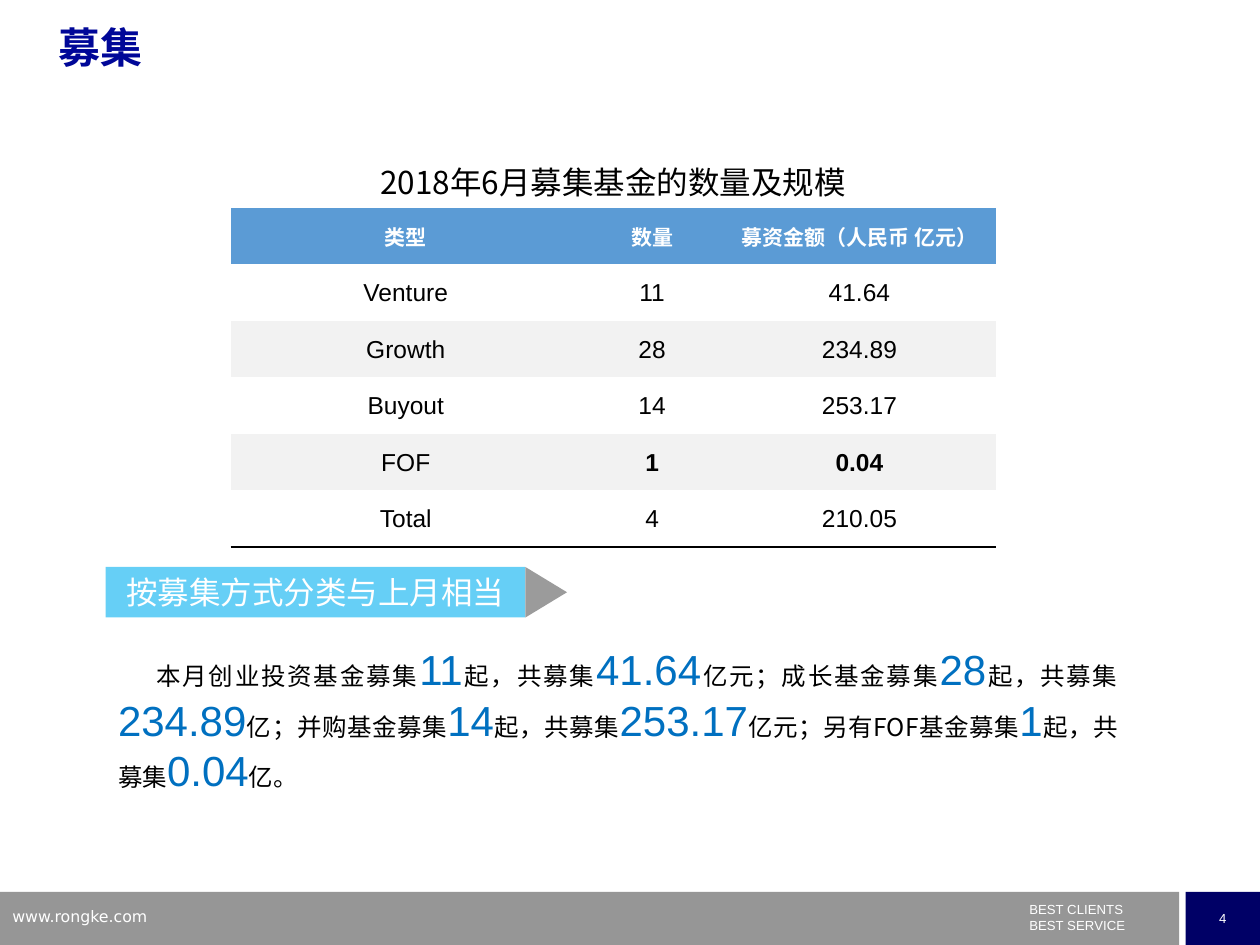
from dataclasses import dataclass

from lxml import etree
from pptx import Presentation
from pptx import util as u
from pptx.dml import color as dml
from pptx.enum import shapes, text
from pptx.oxml import ns

HUES = {
    "white": "FFFFFF",
    "black": "000000",
    "grey": "969696",
    "navy": "000066",
    "title": "000798",
    "spot": "0070C0",
    "head": "5B9BD5",
    "band": "F2F2F2",
    "sky": "00B0F0",
    "tip": "595959",
}
HAN = "Noto Sans CJK SC"
LEFT, MID, JUST = text.PP_ALIGN.LEFT, text.PP_ALIGN.CENTER, text.PP_ALIGN.JUSTIFY
PLAIN = "{2D5ABB26-0587-4C30-8999-92F81FD0307C}"

HEADS = ["类型", "数量", "募资金额（人民币 亿元）"]
FUNDS = [
    ["Venture", "11", "41.64"],
    ["Growth", "28", "234.89"],
    ["Buyout", "14", "253.17"],
    ["FOF", "1", "0.04"],
    ["Total", "4", "210.05"],
]
BODY = (
    "本月创业投资基金募集|11|起，共募集|41.64|亿元；成长基金募集|28|起，共募集|234.89|"
    "亿；并购基金募集|14|起，共募集|253.17|亿元；另有FOF基金募集|1|起，共募集|0.04|亿。"
)


@dataclass
class Area:
    left: float
    top: float
    width: float
    height: float

    def cm(self) -> list:
        return [u.Cm(v) for v in (self.left, self.top, self.width, self.height)]


def hue(name: str) -> dml.RGBColor:
    return dml.RGBColor.from_string(HUES[name])


def node(parent, tag: str, **attrs):
    return etree.SubElement(parent, ns.qn(tag), **attrs)


def write(frame, words: str, *, size: float, face: str = "Arial", tone: str = "black",
          bold: bool = False, align=LEFT, lead: float = 1, indent: float = 0) -> None:
    for row, line in enumerate(words.split("\n")):
        para = frame.add_paragraph() if row else frame.paragraphs[0]
        para.alignment = align
        para.line_spacing = lead
        if indent:
            para._p.get_or_add_pPr().set("indent", str(u.Cm(indent)))
        for turn, part in enumerate(line.split("|")):
            spot = turn % 2 == 1
            run = para.add_run()
            run.text = part
            font = run.font
            font.size = u.Pt(24 if spot else size)
            font.bold = bold
            font.color.rgb = hue("spot" if spot else tone)
            font.name = "Arial" if spot else face
            node(run._r.get_or_add_rPr(), "a:ea", typeface=HAN if face == "Arial" else face)


def label(slide, area: Area, words: str, *, grow: bool = False, inset: float = 0.13, **look) -> None:
    frame = slide.shapes.add_textbox(*area.cm()).text_frame
    frame.word_wrap = True
    frame.margin_top = u.Cm(inset)
    if grow:
        frame.auto_size = text.MSO_AUTO_SIZE.SHAPE_TO_FIT_TEXT
    write(frame, words, **look)


def block(place, area: Area, tone: str, kind=shapes.MSO_SHAPE.RECTANGLE, alpha: int = 100):
    shape = place.add_shape(kind, *area.cm())
    shape.shadow.inherit = False
    shape.fill.solid()
    shape.fill.fore_color.rgb = hue(tone)
    shape.line.fill.background()
    if alpha < 100:
        paint = shape._element.spPr.find(ns.qn("a:solidFill"))
        node(paint[0], "a:alpha", val=str(alpha * 1000))
    shape.text_frame.vertical_anchor = text.MSO_ANCHOR.MIDDLE
    return shape


def rule(cell) -> None:
    props = cell._tc.get_or_add_tcPr()
    line = etree.Element(ns.qn("a:lnB"), w=str(u.Pt(1)))
    node(node(line, "a:solidFill"), "a:srgbClr", val=HUES["black"])
    props.insert(0, line)


def fill_cell(cell, words: str, shade: str = "", **look) -> None:
    cell.margin_left = cell.margin_right = cell.margin_top = u.Cm(0.03)
    cell.margin_bottom = 0
    cell.vertical_anchor = text.MSO_ANCHOR.MIDDLE
    if shade:
        cell.fill.solid()
        cell.fill.fore_color.rgb = hue(shade)
    else:
        cell.fill.background()
    write(cell.text_frame, words, align=MID, **look)


def draw_table(slide) -> None:
    area = Area(4.65, 3.05, 15.42, 7.98)
    table = slide.shapes.add_table(len(FUNDS) + 2, len(HEADS), *area.cm()).table
    table._tbl.tblPr.find(ns.qn("a:tableStyleId")).text = PLAIN
    table.first_row = table.horz_banding = False
    for col, width in zip(table.columns, (7.06, 2.87, 5.49)):
        col.width = u.Cm(width)
    for row in table.rows:
        row.height = u.Cm(1.14)
    table.cell(0, 0).merge(table.cell(0, 2))
    fill_cell(table.cell(0, 0), "2018年6月募集基金的数量及规模", size=18, face="Noto Sans CJK JP")
    for col, words in enumerate(HEADS):
        fill_cell(table.cell(1, col), words, "head", size=12, face=HAN, tone="white", bold=True)
    for row, fund in enumerate(FUNDS):
        for col, words in enumerate(fund):
            cell = table.cell(row + 2, col)
            fill_cell(cell, words, "band" if row % 2 else "", size=14,
                      bold=fund[0] == "FOF" and col > 0)
            if fund is FUNDS[-1]:
                rule(cell)


def draw_foot(slide) -> None:
    block(slide.shapes, Area(0, 17.98, 23.77, 1.07), "grey")
    page = block(slide.shapes, Area(23.9, 17.98, 1.5, 1.07), "navy")
    page.text_frame.word_wrap = False
    write(page.text_frame, "4", size=7.5, tone="white", align=MID)
    label(slide, Area(20.5, 18.14, 3.81, 0.74), "BEST CLIENTS\nBEST SERVICE",
          inset=0.03, size=7.5, tone="white")
    label(slide, Area(0, 18.14, 6.1, 0.66), "www.rongke.com",
          size=9, face="DejaVu Sans", tone="white")


def draw_flag(slide) -> None:
    flag = slide.shapes.add_group_shape().shapes
    bar = block(flag, Area(2.13, 11.43, 8.46, 1.02), "sky", alpha=60)
    bar.text_frame.word_wrap = True
    write(bar.text_frame, "按募集方式分类与上月相当", size=18, face=HAN, tone="white", align=MID)
    tip = block(flag, Area(10.5, 11.52, 1.02, 0.84), "tip",
                shapes.MSO_SHAPE.ISOSCELES_TRIANGLE, alpha=60)
    tip.rotation = 90


def main() -> None:
    deck = Presentation()
    deck.slide_width, deck.slide_height = u.Cm(25.4), u.Cm(19.05)
    slide = deck.slides.add_slide(deck.slide_layouts[6])
    draw_foot(slide)
    label(slide, Area(2.13, 12.85, 20.65, 3.33), BODY, grow=True,
          size=14, face=HAN, align=JUST, indent=0.77)
    draw_flag(slide)
    label(slide, Area(0.94, 0.41, 22.86, 1.78), "募集", size=24, tone="title", bold=True, lead=0.9)
    draw_table(slide)
    deck.save("out.pptx")


if __name__ == "__main__":
    main()
